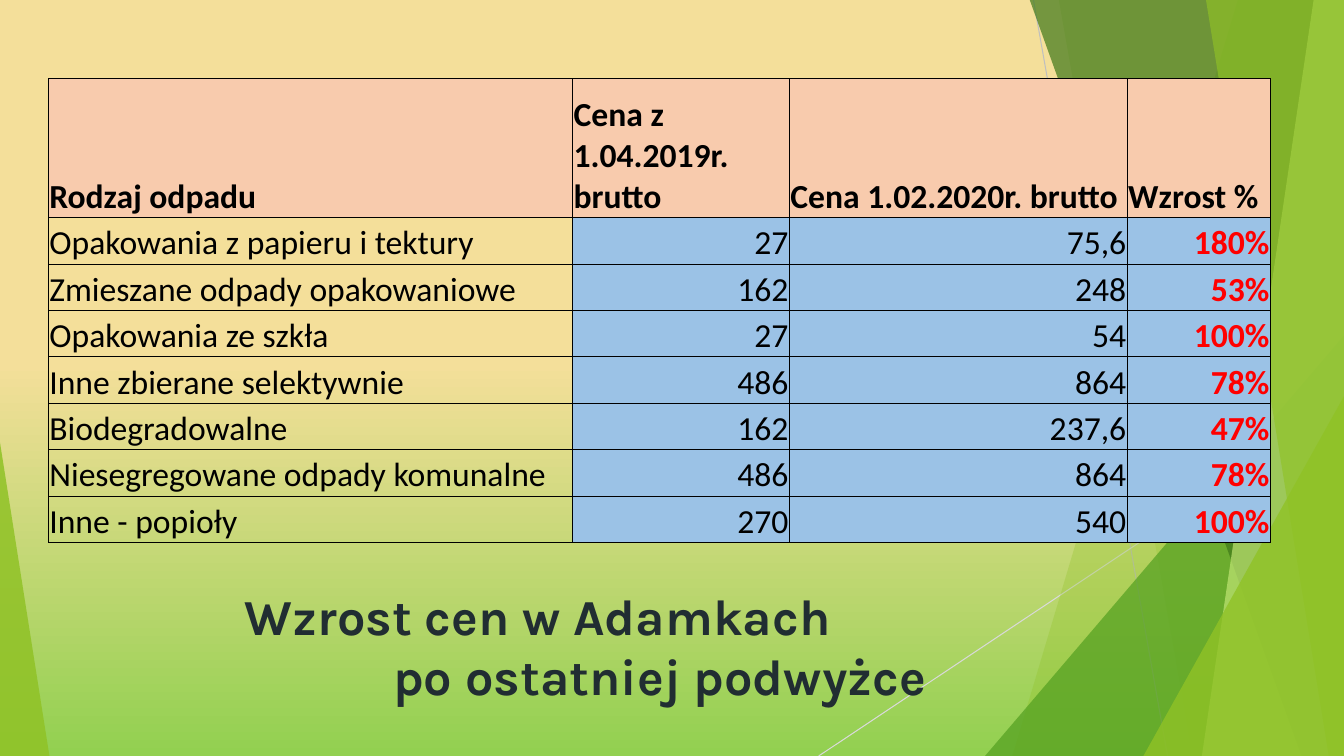
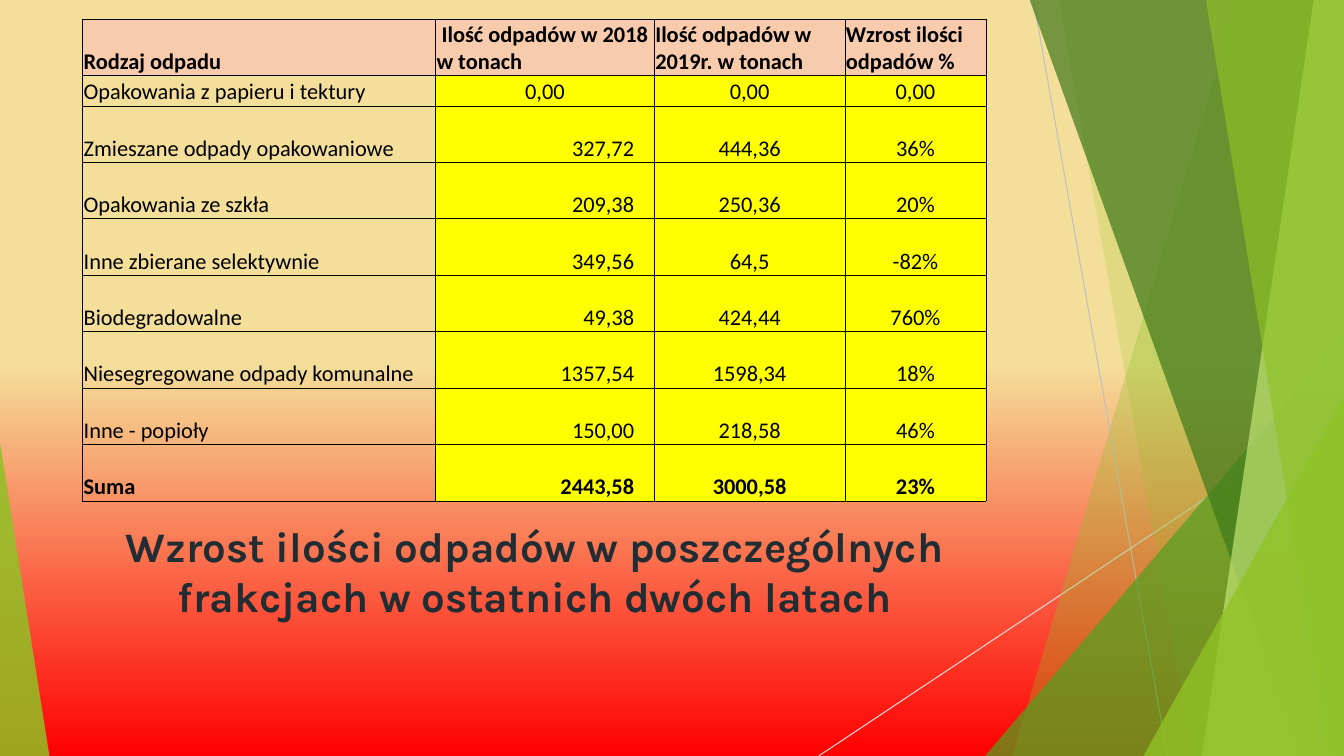
"""Build two slides on rising waste prices and waste volumes."""
from dataclasses import dataclass

from lxml.etree import SubElement
from pptx import Presentation
from pptx.dml.color import RGBColor
from pptx.enum.shapes import MSO_CONNECTOR, MSO_SHAPE
from pptx.enum.text import MSO_ANCHOR, PP_ALIGN
from pptx.oxml.ns import qn
from pptx.util import Inches, Pt

COLOURS = {
    "sand": "F4DF9A",
    "meadow": "92D050",
    "red": "FF0000",
    "leaf": "90C226",
    "grass": "54A021",
    "forest": "3F7819",
    "lime": "C0E474",
    "grey": "BFBFBF",
    "pale_grey": "D9D9D9",
    "black": "000000",
    "ink": "212D32",
    "peach": "F8CBAD",
    "blue": "9BC2E6",
    "yellow": "FFFF00",
}
WIDTH, HEIGHT = 13.33, 7.5
TITLE_SIZE = (8.39, 1.19)
WASTE_KINDS = [
    "Opakowania z papieru i tektury",
    "Zmieszane odpady opakowaniowe",
    "Opakowania ze szkła",
    "Inne zbierane selektywnie",
    "Biodegradowalne",
    "Niesegregowane odpady komunalne",
    "Inne - popioły",
]


@dataclass
class Column:
    """Describe one table column and its body style."""
    heading: str
    width: float
    values: list
    fill: str = ""
    align: PP_ALIGN = PP_ALIGN.LEFT
    colour: str = "black"
    bold: bool = False
    right_inset: float = 0.01


def rgb(name):
    """Return the named colour."""
    return RGBColor.from_string(COLOURS[name])


def style_runs(paragraph, font, size, colour, bold):
    """Format every run of a paragraph."""
    for span in paragraph.runs:
        span.font.name = font
        span.font.size = Pt(size)
        span.font.bold = bold
        span.font.color.rgb = rgb(colour)


def paint(shape, colour, opacity):
    """Give a shape a see-through fill without outline or shadow."""
    shape.shadow.inherit = False
    shape.line.fill.background()
    shape.fill.solid()
    shape.fill.fore_color.rgb = rgb(colour)
    tint = shape.element.spPr.find(qn("a:solidFill"))[0]
    SubElement(tint, qn("a:alpha"), val=str(opacity * 1000))


def add_line(page, start, end, colour):
    """Draw a thin straight line."""
    points = [Inches(value) for value in (*start, *end)]
    line = page.shapes.add_connector(MSO_CONNECTOR.STRAIGHT, *points)
    line.line.width = Pt(0.75)
    line.line.color.rgb = rgb(colour)
    SubElement(line.element.spPr, qn("a:effectLst"))


def add_band(page, top_left, bottom_left, colour, opacity):
    """Draw a slanted band that reaches the right edge of the slide."""
    builder = page.shapes.build_freeform(Inches(top_left), Inches(-0.01))
    corners = [(WIDTH, -0.01), (WIDTH, HEIGHT), (bottom_left, HEIGHT)]
    builder.add_line_segments([(Inches(x), Inches(y)) for x, y in corners])
    paint(builder.convert_to_shape(), colour, opacity)


def add_triangle(page, left, top, width, tip, colour, opacity):
    """Draw a triangle that stands on the bottom edge of the slide."""
    bounds = [Inches(value) for value in (left, top, width, HEIGHT - top)]
    triangle = page.shapes.add_shape(MSO_SHAPE.ISOSCELES_TRIANGLE, *bounds)
    triangle.adjustments[0] = tip
    paint(triangle, colour, opacity)


def decorate_layout(page, layout):
    """Draw the green facets once and move them to the shared layout."""
    add_line(page, (10.25, 0), (11.58, HEIGHT), "grey")
    add_line(page, (WIDTH, 4.03), (8.12, HEIGHT), "pale_grey")
    add_band(page, 12.28, 10.04, "leaf", 30)
    add_band(page, 10.5, 11.83, "leaf", 20)
    add_triangle(page, 9.77, 3.33, 3.56, 1, "grass", 72)
    add_band(page, 10.21, 12.91, "forest", 70)
    add_band(page, 13.03, 11.92, "lime", 70)
    add_band(page, 11.96, 13.18, "leaf", 65)
    add_triangle(page, 11.34, 3.93, 1.99, 1, "leaf", 80)
    add_triangle(page, 0, 4.39, 0.49, 0, "leaf", 85)
    for placeholder in list(layout.placeholders):
        layout.shapes.element.remove(placeholder.element)
    for shape in list(page.shapes):
        layout.shapes.element.append(shape.element)


def set_background(page, bottom_colour):
    """Fade the page from sand to the given colour."""
    fill = page.background.fill
    fill.gradient()
    fill.gradient_angle = 270
    ends = [(0.48, "sand"), (1, bottom_colour)]
    for stop, (position, colour) in zip(fill.gradient_stops, ends):
        stop.position = position
        stop.color.rgb = rgb(colour)


def add_title(page, left, top, text, size):
    """Add a bold centred title and return its text frame."""
    bounds = [Inches(value) for value in (left, top, *TITLE_SIZE)]
    frame = page.shapes.add_textbox(*bounds).text_frame
    frame.word_wrap = True
    frame.vertical_anchor = MSO_ANCHOR.BOTTOM
    frame.text = text
    for paragraph in frame.paragraphs:
        paragraph.alignment = PP_ALIGN.CENTER
        style_runs(paragraph, "Karla", size, "ink", True)
    frame.paragraphs[-1].space_after = Pt(6)
    return frame


def stagger_lines(frame, indents):
    """Align the lines left, each with its own indent."""
    for paragraph, indent in zip(frame.paragraphs, indents):
        paragraph.alignment = PP_ALIGN.LEFT
        paragraph._p.get_or_add_pPr().set("marL", str(Inches(indent)))


def add_borders(cell):
    """Frame a cell with thin black lines."""
    properties = cell._tc.get_or_add_tcPr()
    for side in ("lnL", "lnR", "lnT", "lnB"):
        edge = SubElement(properties, qn(f"a:{side}"), w=str(Pt(0.5)))
        fill = SubElement(edge, qn("a:solidFill"))
        SubElement(fill, qn("a:srgbClr"), val=COLOURS["black"])


def fill_cell(cell, text, size, fill, align, colour, bold, right_inset=0.01):
    """Write and style one table cell."""
    cell.text_frame.text = text
    cell.vertical_anchor = MSO_ANCHOR.BOTTOM
    cell.margin_left = cell.margin_top = Inches(0.01)
    cell.margin_right = Inches(right_inset)
    cell.margin_bottom = 0
    add_borders(cell)
    if fill:
        cell.fill.solid()
        cell.fill.fore_color.rgb = rgb(fill)
    else:
        cell.fill.background()
    paragraph = cell.text_frame.paragraphs[0]
    paragraph.alignment = align
    style_runs(paragraph, "Calibri", size, colour, bold)


def add_data_table(page, left, top, columns, heights, size, has_total=False):
    """Add a table from column descriptions and return it."""
    width = sum(column.width for column in columns)
    bounds = [Inches(value) for value in (left, top, width, sum(heights))]
    table = page.shapes.add_table(len(heights), len(columns), *bounds).table
    table.first_row = table.horz_banding = False
    for row, height in zip(table.rows, heights):
        row.height = Inches(height)
    for across, column in enumerate(columns):
        table.columns[across].width = Inches(column.width)
        fill_cell(table.cell(0, across), column.heading, size, "peach",
                  PP_ALIGN.LEFT, "black", True)
        for down, value in enumerate(column.values, 1):
            is_total = has_total and down == len(column.values)
            fill_cell(table.cell(down, across), value, size, column.fill,
                      column.align, column.colour, column.bold or is_total,
                      column.right_inset)
    return table


def build_prices(page):
    """Build the slide on price increases."""
    set_background(page, "meadow")
    right = PP_ALIGN.RIGHT
    columns = [
        Column("Rodzaj odpadu", 5.2, WASTE_KINDS),
        Column("Cena z 1.04.2019r. brutto", 2.15,
               ["27", "162", "27", "486", "162", "486", "270"], "blue", right),
        Column("Cena 1.02.2020r. brutto", 3.35,
               ["75,6", "248", "54", "864", "237,6", "864", "540"], "blue", right),
        Column("Wzrost %", 1.42,
               ["180%", "53%", "100%", "78%", "47%", "78%", "100%"],
               "blue", right, "red", True),
    ]
    add_data_table(page, 0.48, 0.78, columns, [1.38] + [0.46] * 7, 24)
    frame = add_title(page, 2.27, 5.86,
                      "Wzrost cen w Adamkach\npo ostatniej podwyżce", 36)
    stagger_lines(frame, [0.06, 1.53])


def build_volumes(page):
    """Build the slide on waste volumes."""
    set_background(page, "red")
    center = PP_ALIGN.CENTER
    columns = [
        Column("Rodzaj odpadu", 3.5, WASTE_KINDS + ["Suma"]),
        Column(" Ilość odpadów w 2018 w tonach", 2.17,
               ["0,00", "327,72", "209,38", "349,56", "49,38", "1357,54",
                "150,00", "2443,58"], "yellow", PP_ALIGN.RIGHT, right_inset=0.2),
        Column("Ilość odpadów w 2019r. w tonach", 1.89,
               ["0,00", "444,36", "250,36", "64,5", "424,44", "1598,34",
                "218,58", "3000,58"], "yellow", center),
        Column("Wzrost ilości odpadów %", 1.4,
               ["0,00", "36%", "20%", "-82%", "760%", "18%", "46%", "23%"],
               "yellow", center),
    ]
    add_title(page, 1.11, 5.02, "Wzrost ilości odpadów w poszczególnych "
              "frakcjach w ostatnich dwóch latach", 30)
    table = add_data_table(page, 0.82, 0.19, columns,
                           [0.56, 0.3] + [0.56] * 7, 16, has_total=True)
    first_volume = table.cell(1, 1)
    first_volume.margin_right = Inches(0.01)
    first_volume.text_frame.paragraphs[0].alignment = center


def main():
    """Create and save the deck."""
    deck = Presentation()
    deck.slide_width, deck.slide_height = Inches(WIDTH), Inches(HEIGHT)
    layout = deck.slide_layouts[6]
    prices, volumes = [deck.slides.add_slide(layout) for _ in range(2)]
    decorate_layout(prices, layout)
    build_prices(prices)
    build_volumes(volumes)
    deck.save("out.pptx")


if __name__ == "__main__":
    main()
